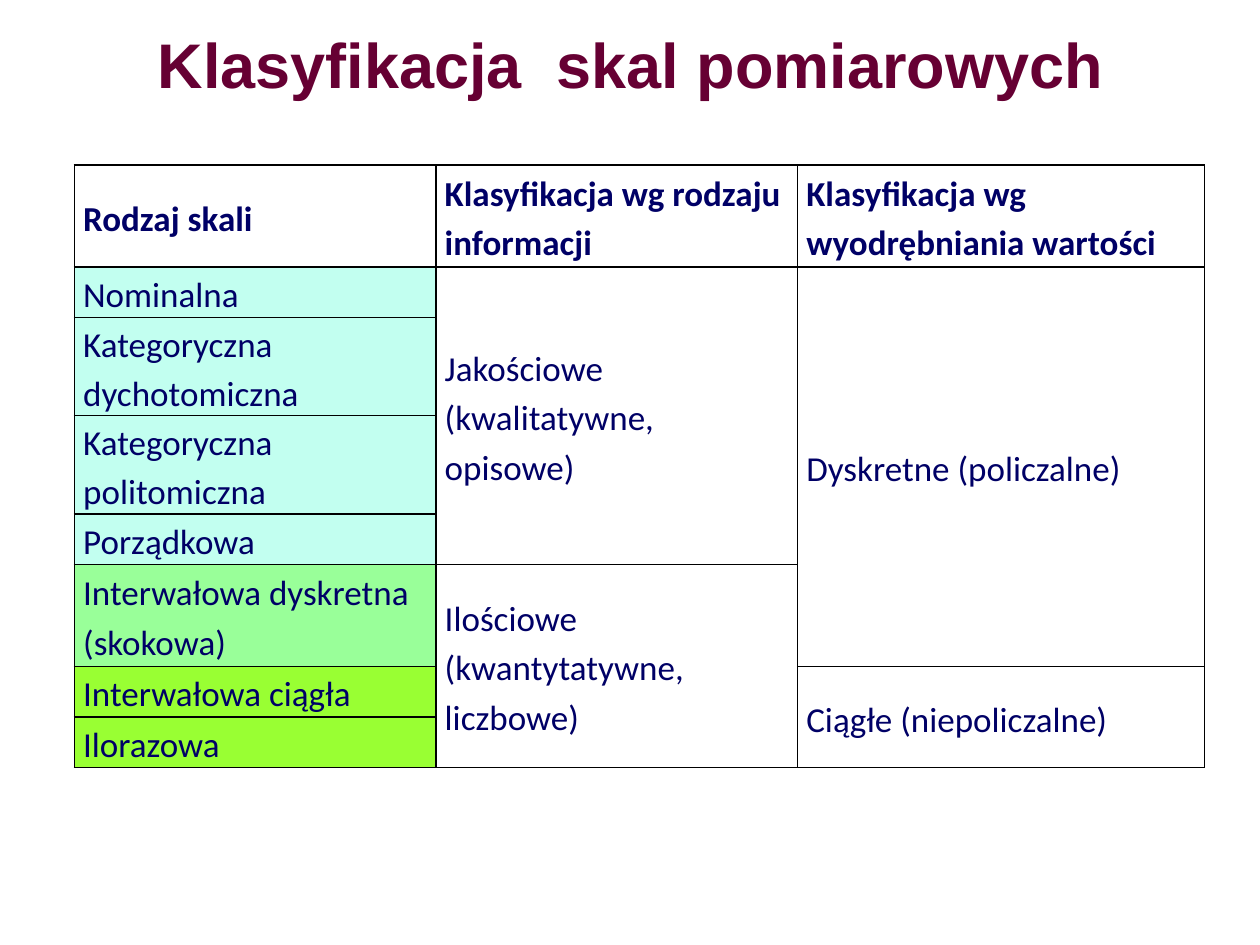
from lxml import etree
from pptx import Presentation
from pptx.dml.color import RGBColor
from pptx.enum.text import MSO_ANCHOR, PP_ALIGN
from pptx.oxml.ns import qn
from pptx.util import Inches, Pt

MIDDLE = MSO_ANCHOR.MIDDLE
CENTER = PP_ALIGN.CENTER

COLORS = {
    "title": "660033",
    "text": "000066",
    "border": "000000",
    "qualitative": "C2FFF0",
    "discrete": "99FF99",
    "continuous": "99FF33",
}
COLUMN_WIDTHS = [2.87, 2.87, 3.23]
HEADERS = [
    "Rodzaj skali",
    "Klasyfikacja wg rodzaju informacji",
    "Klasyfikacja wg wyodrębniania wartości",
]
# Scale name, row height, fill
SCALES = [
    ("Nominalna", 0.4, "qualitative"),
    ("Kategoryczna  dychotomiczna", 0.78, "qualitative"),
    ("Kategoryczna  politomiczna", 0.78, "qualitative"),
    ("Porządkowa", 0.4, "qualitative"),
    ("Interwałowa dyskretna (skokowa)", 0.81, "discrete"),
    ("Interwałowa ciągła", 0.4, "continuous"),
    ("Ilorazowa", 0.4, "continuous"),
]
# First row, last row, column, text
GROUPS = [
    (1, 4, 1, "Jakościowe (kwalitatywne, opisowe)"),
    (5, 7, 1, "Ilościowe (kwantytatywne, liczbowe)"),
    (1, 5, 2, "Dyskretne (policzalne)"),
    (6, 7, 2, "Ciągłe (niepoliczalne)"),
]


def set_font(para, name, size, color, bold):
    para.font.name = name
    para.font.size = Pt(size)
    para.font.bold = bold
    para.font.color.rgb = RGBColor.from_string(COLORS[color])


def add_borders(cell):
    properties = cell._tc.get_or_add_tcPr()
    for side in ("lnL", "lnR", "lnT", "lnB"):
        line = etree.SubElement(properties, qn(f"a:{side}"), w=str(Pt(1)))
        fill = etree.SubElement(line, qn("a:solidFill"))
        etree.SubElement(fill, qn("a:srgbClr"), val=COLORS["border"])


deck = Presentation()
deck.slide_width = Inches(10)
deck.slide_height = Inches(7.5)
page = deck.slides.add_slide(deck.slide_layouts[6])

# Title
title = page.shapes.add_textbox(Inches(0.67), Inches(0.09), Inches(8.67), Inches(0.82))
title.text_frame.word_wrap = True
title.text_frame.vertical_anchor = MIDDLE
para = title.text_frame.paragraphs[0]
para.text = "Klasyfikacja  skal pomiarowych"
para.alignment = CENTER
set_font(para, "Arial", 36, "title", True)

# Table grid
row_heights = [0.81] + [height for _, height, _ in SCALES]
table = page.shapes.add_table(
    len(row_heights), len(COLUMN_WIDTHS), Inches(0.59), Inches(1.31),
    Inches(sum(COLUMN_WIDTHS)), Inches(sum(row_heights)),
).table
for column, width in zip(table.columns, COLUMN_WIDTHS):
    column.width = Inches(width)
for row, height in zip(table.rows, row_heights):
    row.height = Inches(height)

# Wording and merged groups
for index, header in enumerate(HEADERS):
    table.cell(0, index).text = header
for index, (scale, _, _) in enumerate(SCALES, start=1):
    table.cell(index, 0).text = scale
for first, last, column, text in GROUPS:
    table.cell(first, column).merge(table.cell(last, column))
    table.cell(first, column).text = text

# Cell formatting
for row_index, row in enumerate(table.rows):
    for cell in row.cells:
        cell.vertical_anchor = MIDDLE
        cell.margin_left = cell.margin_right = Inches(0.07)
        cell.margin_top = cell.margin_bottom = 0
        add_borders(cell)
        cell.fill.background()
        para = cell.text_frame.paragraphs[0]
        para.line_spacing = 1.15
        set_font(para, "Calibri", 20, "text", row_index == 0)

for index, (_, _, color) in enumerate(SCALES, start=1):
    fill = table.cell(index, 0).fill
    fill.solid()
    fill.fore_color.rgb = RGBColor.from_string(COLORS[color])

deck.save("out.pptx")
